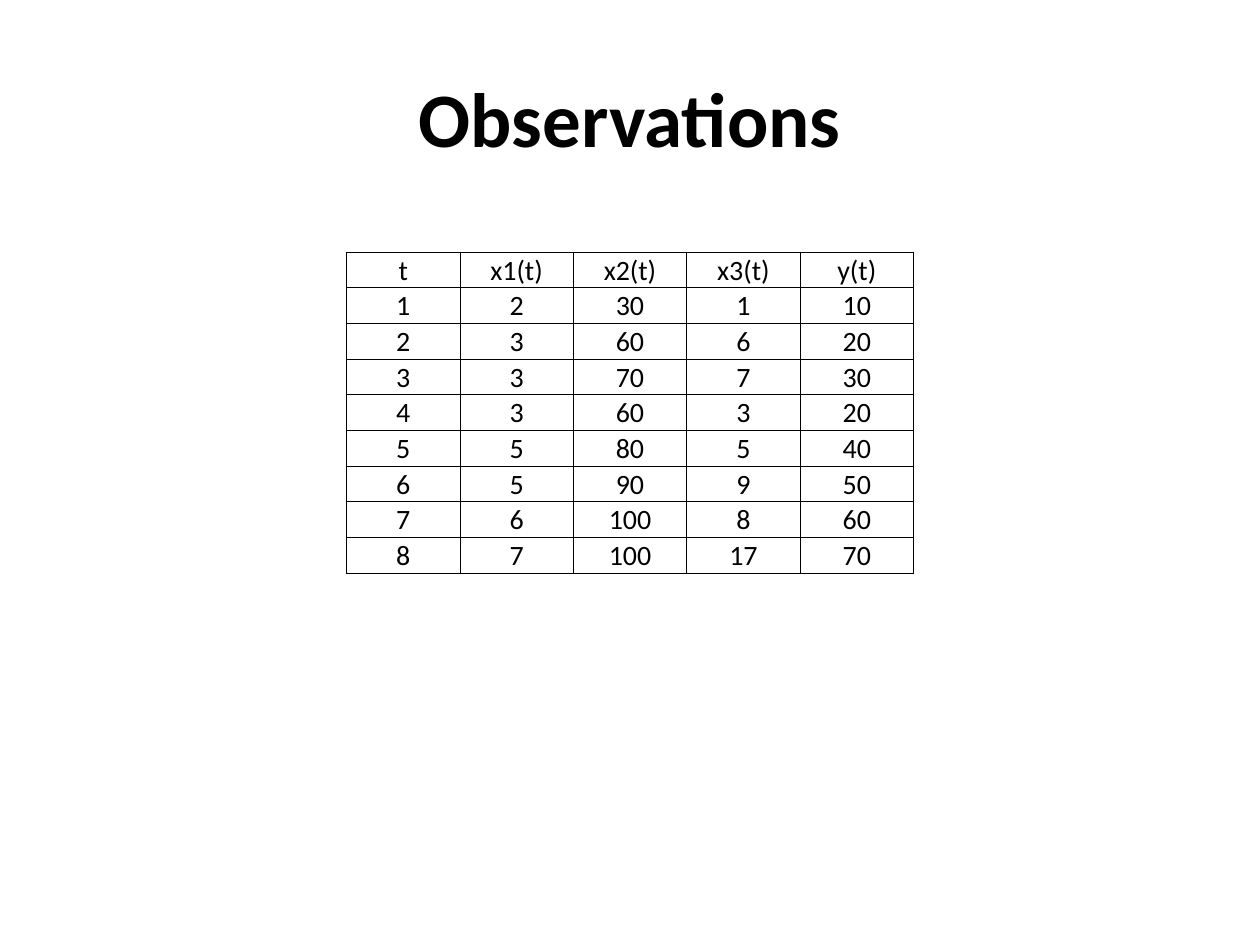
from pptx import Presentation
from pptx.dml.color import RGBColor
from pptx.enum.text import MSO_ANCHOR, PP_ALIGN
from pptx.oxml.ns import qn
from pptx.util import Inches, Pt
from lxml.etree import SubElement

BLACK = RGBColor(0x00, 0x00, 0x00)
FONT = "Calibri"
BORDER = Pt(0.5)
INSET = Inches(0.01)

HEADERS = ["t", "x1(t)", "x2(t)", "x3(t)", "y(t)"]
OBSERVATIONS = [
    [1, 2, 30, 1, 10],
    [2, 3, 60, 6, 20],
    [3, 3, 70, 7, 30],
    [4, 3, 60, 3, 20],
    [5, 5, 80, 5, 40],
    [6, 5, 90, 9, 50],
    [7, 6, 100, 8, 60],
    [8, 7, 100, 17, 70],
]


def set_text(tf, text, size, bold=False):
    tf.text = text
    p = tf.paragraphs[0]
    p.alignment = PP_ALIGN.CENTER
    font = p.runs[0].font
    font.name, font.size, font.bold = FONT, Pt(size), bold
    font.color.rgb = BLACK


def set_borders(cell):
    tc_pr = cell._tc.get_or_add_tcPr()
    for side in ("a:lnL", "a:lnR", "a:lnT", "a:lnB"):
        line = SubElement(tc_pr, qn(side), w=str(BORDER))
        fill = SubElement(line, qn("a:solidFill"))
        SubElement(fill, qn("a:srgbClr"), val=str(BLACK))


def add_title(s, box, text):
    tf = s.shapes.add_textbox(*box).text_frame
    tf.word_wrap = True
    tf.vertical_anchor = MSO_ANCHOR.MIDDLE
    set_text(tf, text, 44, bold=True)


def add_data_table(s, box, rows):
    left, top, width, height = box
    table = s.shapes.add_table(len(rows), len(rows[0]), *box).table
    table.first_row = table.horz_banding = False
    # Equal columns and rows
    for column in table.columns:
        column.width = width // len(rows[0])
    for row in table.rows:
        row.height = height // len(rows)
    # Cells
    for i, values in enumerate(rows):
        for j, value in enumerate(values):
            cell = table.cell(i, j)
            cell.margin_left = cell.margin_right = cell.margin_top = INSET
            cell.margin_bottom = 0
            cell.vertical_anchor = MSO_ANCHOR.BOTTOM
            set_text(cell.text_frame, str(value), 16)
            set_borders(cell)
            cell.fill.background()


def main():
    prs = Presentation()
    prs.slide_width, prs.slide_height = Inches(10), Inches(7.5)
    s = prs.slides.add_slide(prs.slide_layouts[6])

    def share(x, y, w, h):
        return (int(prs.slide_width * x), int(prs.slide_height * y),
                int(prs.slide_width * w), int(prs.slide_height * h))

    add_title(s, share(0.05, 0.04, 0.9, 1 / 6), "Observations")
    add_data_table(s, share(0.275, 4 / 15, 0.45, 0.34),
                   [HEADERS] + OBSERVATIONS)
    prs.save("out.pptx")


if __name__ == "__main__":
    main()
